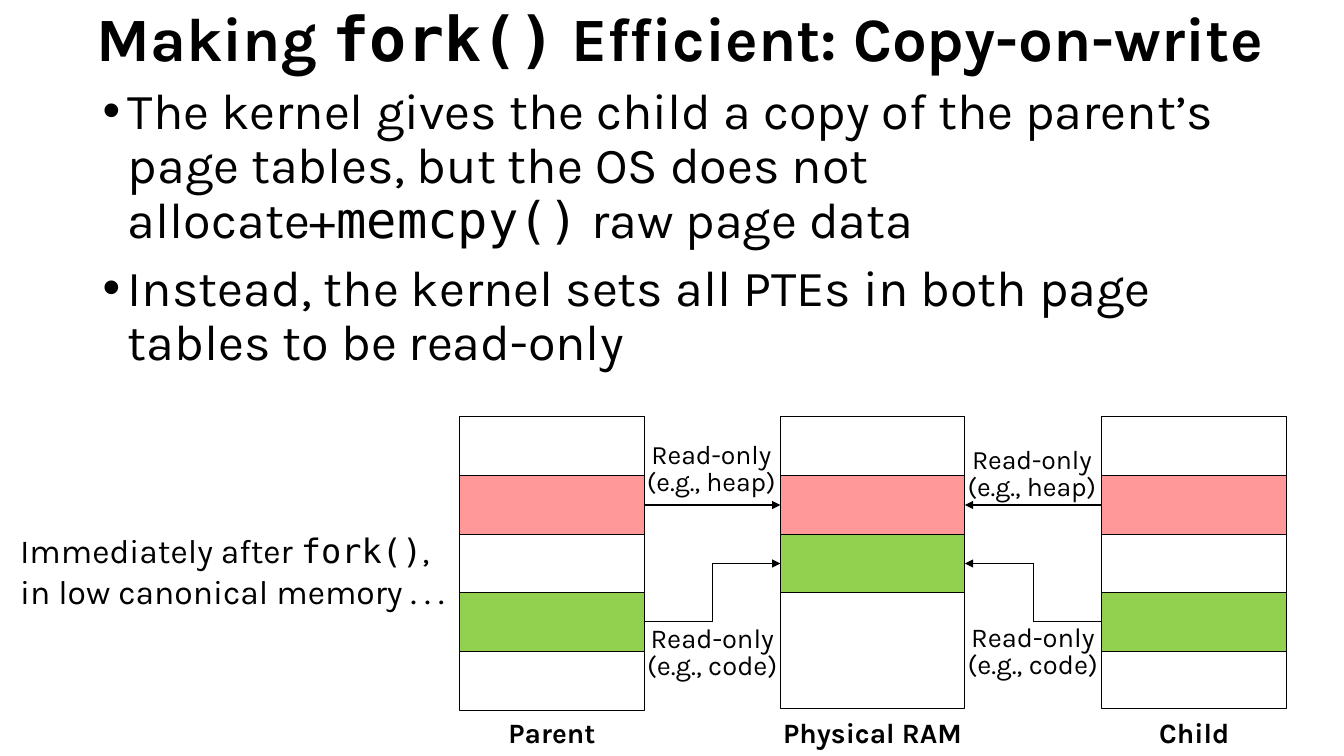
from lxml.etree import SubElement
from pptx import Presentation
from pptx.dml.color import RGBColor
from pptx.enum.shapes import MSO_CONNECTOR, MSO_SHAPE
from pptx.enum.text import MSO_ANCHOR, PP_ALIGN
from pptx.oxml.ns import qn
from pptx.util import Inches, Pt

BLACK = RGBColor(0x00, 0x00, 0x00)
WHITE = RGBColor(0xFF, 0xFF, 0xFF)
HEAP = RGBColor(0xFF, 0x99, 0x99)
CODE = RGBColor(0x92, 0xD0, 0x50)
SANS = "Karla"
MONO = "DejaVu Sans Mono"
LEFT, RIGHT = 1, 3

TOP, COL_W, PAGE_H = 4.13, 1.83, 0.58
HEAP_Y = TOP + 0.59
RAM_CODE_Y = HEAP_Y + PAGE_H
CODE_Y = RAM_CODE_Y + PAGE_H


class SlideBuilder:
    def __init__(self, prs):
        self.s = prs.slides.add_slide(prs.slide_layouts[6])

    def text(self, box, paragraphs, size, bold=False, align=PP_ALIGN.LEFT,
             spacing=None, anchor=MSO_ANCHOR.TOP, bullet=False):
        tf = self.s.shapes.add_textbox(*map(Inches, box)).text_frame
        tf.word_wrap = True
        tf.vertical_anchor = anchor
        for i, runs in enumerate(paragraphs):
            p = tf.paragraphs[0] if i == 0 else tf.add_paragraph()
            p.alignment = align
            p.line_spacing = spacing
            p.font.size = Pt(size)
            p.font.bold = bold
            p.font.name = SANS
            p.font.color.rgb = BLACK
            if bullet:
                self.bullet(p)
            for j, content in enumerate(runs):
                r = p.add_run()
                r.text = content
                r.font.size = Pt(size)
                r.font.bold = bold
                r.font.name = MONO if j % 2 else SANS
                r.font.color.rgb = BLACK

    def bullet(self, p):
        p.space_before = Pt(10)
        pPr = p._p.get_or_add_pPr()
        pPr.set("marL", str(Inches(0.25)))
        pPr.set("indent", str(-Inches(0.25)))
        font = pPr.makeelement(qn("a:buFont"), {"typeface": "Arial"})
        char = pPr.makeelement(qn("a:buChar"), {"char": "•"})
        pPr.find(qn("a:spcBef")).addnext(font)
        font.addnext(char)

    def rect(self, x, y, h, color):
        sp = self.s.shapes.add_shape(
            MSO_SHAPE.RECTANGLE, *map(Inches, (x, y, COL_W, h)))
        sp.shadow.inherit = False
        sp.fill.solid()
        sp.fill.fore_color.rgb = color
        sp.line.color.rgb = BLACK
        sp.line.width = Pt(0.75)
        return sp

    def line(self, start, end, source=None, target=None, arrow=False):
        cxn = self.s.shapes.add_connector(
            MSO_CONNECTOR.STRAIGHT, *map(Inches, start + end))
        if source:
            cxn.begin_connect(*source)
        if target:
            cxn.end_connect(*target)
        cxn.line.color.rgb = BLACK
        cxn.line.width = Pt(0.75)
        if arrow:
            SubElement(cxn.line._get_or_add_ln(), qn("a:tailEnd"), type="triangle")
        SubElement(cxn._element.spPr, qn("a:effectLst"))

    def memory(self, x, h, code_y, name, name_w):
        self.rect(x, TOP, h, WHITE)
        heap = self.rect(x, HEAP_Y, PAGE_H, HEAP)
        code = self.rect(x, code_y, PAGE_H, CODE)
        self.text((x + (COL_W - name_w) / 2, 7.05, name_w, 0.44), [[name]], 20,
                  bold=True, align=PP_ALIGN.CENTER)
        return heap, code

    def mapping(self, pages, frames, x1, x2, out, into):
        mid = (x1 + x2) / 2
        heap_y, low, high = (
            y + PAGE_H / 2 for y in (HEAP_Y, CODE_Y, RAM_CODE_Y))
        self.line((x1, heap_y), (x2, heap_y), (pages[0], out), (frames[0], into), True)
        self.line((x1, low), (mid, low), source=(pages[1], out))
        self.line((mid, low), (mid, high))
        self.line((mid, high), (x2, high), target=(frames[1], into), arrow=True)


def main():
    prs = Presentation()
    prs.slide_width, prs.slide_height = Inches(13.33), Inches(7.5)
    b = SlideBuilder(prs)

    b.text((0.92, 0.8, 11.93, 3.15), [
        ["The kernel gives the child a copy of the parent’s page tables, "
         "but the OS does not allocate+", "memcpy()", " raw page data"],
        ["Instead, the kernel sets all PTEs in both page tables to be read-only"],
    ], 36, spacing=0.9, bullet=True)
    b.text((0.78, -0.02, 11.93, 0.87),
           [["Making ", "fork()", " Efficient: Copy-on-write"]], 44, bold=True,
           align=PP_ALIGN.CENTER, spacing=0.9, anchor=MSO_ANCHOR.MIDDLE)
    b.text((0.1, 5.21, 4.62, 0.91),
           [["Immediately after ", "fork()", ", in low canonical memory . . ."]], 24)

    parent_x, ram_x, child_x = 4.56, 7.74, 10.93
    parent = b.memory(parent_x, 2.92, CODE_Y, "Parent", 1.2)
    child = b.memory(child_x, 2.9, CODE_Y, "Child", 1.2)
    ram = b.memory(ram_x, 2.9, RAM_CODE_Y, "Physical RAM", 2.33)
    b.mapping(parent, ram, parent_x + COL_W, ram_x, RIGHT, LEFT)
    b.mapping(child, ram, child_x, ram_x + COL_W, LEFT, RIGHT)

    for x, y, w, size, page in [
        (6.08, 6.18, 1.97, 19.5, "code"),
        (6.24, 4.35, 1.63, 19, "heap"),
        (9.42, 4.4, 1.63, 19, "heap"),
        (9.26, 6.17, 1.97, 19.5, "code"),
    ]:
        b.text((x, y, w, 0.63), [[f"Read-only (e.g., {page})"]], size,
               align=PP_ALIGN.CENTER, spacing=Pt(19))

    prs.save("out.pptx")


if __name__ == "__main__":
    main()
